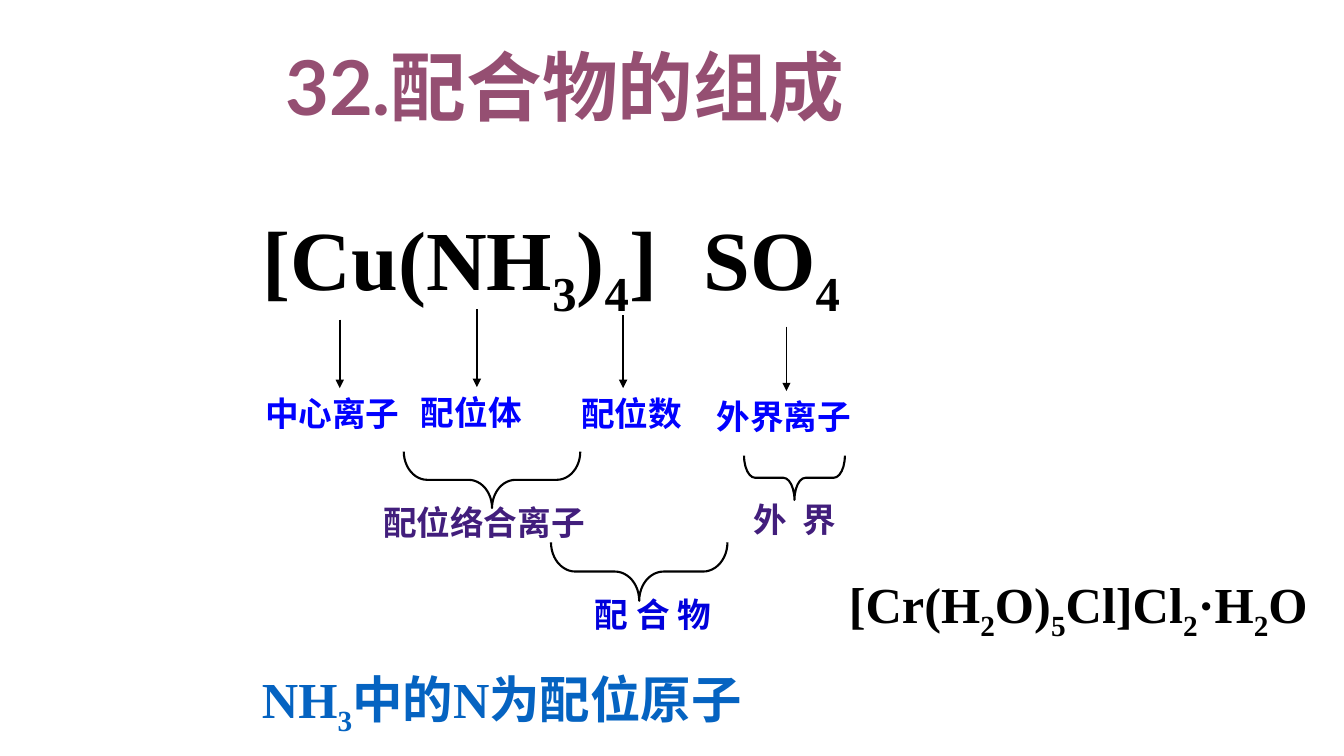
from pptx import Presentation
from pptx.dml.color import RGBColor
from pptx.enum.shapes import MSO_CONNECTOR, MSO_SHAPE
from pptx.enum.text import MSO_AUTO_SIZE, PP_ALIGN
from pptx.oxml.ns import qn
from pptx.util import Inches, Pt
from lxml.etree import SubElement

STRAIGHT = MSO_CONNECTOR.STRAIGHT
LEFT_BRACE = MSO_SHAPE.LEFT_BRACE
FIT_SHAPE = MSO_AUTO_SIZE.SHAPE_TO_FIT_TEXT
LEFT, CENTER = PP_ALIGN.LEFT, PP_ALIGN.CENTER

COLORS = {
    "title": "954F72",
    "ink": "000000",
    "part": "0101FF",
    "sphere": "421E7C",
    "compound": "0000DC",
    "note": "0563C1",
}
SERIF, TITLE_FONT, CJK = "Times New Roman", "Lato", "Noto Sans CJK SC"


def color(name):
    return RGBColor.from_string(COLORS[name])


class Diagram:
    def __init__(self, slide):
        self.slide = slide

    def text(self, box, parts, size, ink, font=SERIF, align=LEFT,
             wrap=True, tab=None, spacing=None):
        """Add one line of text; every second part is a subscript."""
        frame = self.slide.shapes.add_textbox(*map(Inches, box)).text_frame
        frame.word_wrap = wrap
        frame.auto_size = FIT_SHAPE
        line = frame.paragraphs[0]
        line.alignment = align
        if tab:
            stops = SubElement(line._p.get_or_add_pPr(), qn("a:tabLst"))
            SubElement(stops, qn("a:tab"), pos=str(Inches(tab)), algn="l")
        for index, part in enumerate(parts):
            run = line.add_run()
            run.text = part
            run.font.size = Pt(size)
            run.font.bold = True
            run.font.color.rgb = color(ink)
            run.font.name = font
            properties = run._r.get_or_add_rPr()
            SubElement(properties, qn("a:ea"), typeface=CJK)
            if index % 2:
                properties.set("baseline", "-25000")
            if spacing:
                properties.set("spc", str(spacing * 100))

    def label(self, left, top, width, words, ink, **style):
        self.text((left, top, width, 0.5), [words], 24, ink, align=CENTER, **style)

    def arrow(self, x, top, bottom):
        arrow = self.slide.shapes.add_connector(
            STRAIGHT, Inches(x), Inches(top), Inches(x), Inches(bottom))
        arrow.line.color.rgb = color("ink")
        arrow.line.width = Pt(1.25)
        SubElement(arrow.line._get_or_add_ln(), qn("a:tailEnd"), type="triangle")
        SubElement(arrow._element.spPr, qn("a:effectLst"))

    def brace(self, center_x, center_y, span, depth, curve):
        """Add a brace that opens upward, centred on the given point."""
        brace = self.slide.shapes.add_shape(
            LEFT_BRACE, Inches(center_x - depth / 2), Inches(center_y - span / 2),
            Inches(depth), Inches(span))
        brace.rotation = 270
        brace.adjustments[0] = curve
        brace.shadow.inherit = False
        brace.fill.background()
        brace.line.color.rgb = color("ink")
        brace.line.width = Pt(1.5)


def main():
    deck = Presentation()
    deck.slide_width, deck.slide_height = Inches(13.33), Inches(7.5)
    diagram = Diagram(deck.slides.add_slide(deck.slide_layouts[6]))

    diagram.text((2.73, 0.35, 7.58, 1.01), ["32.配合物的组成"], 54, "title",
                 font=TITLE_FONT)
    diagram.text((2.51, 2, 6.76, 1.11), ["[Cu(NH", "3", ")", "4", "]\tSO", "4"],
                 60, "ink", tab=4.37)

    # Arrow x, arrow top, label left, label top, label width, words
    formula_parts = [
        (3.37, 3.17, 2.34, 3.85, 1.91, "中心离子"),
        (4.73, 3.07, 3.97, 3.84, 1.41, "配位体"),
        (6.18, 3.13, 5.32, 3.85, 1.89, "配位数"),
        (7.8, 3.24, 6.84, 3.88, 1.87, "外界离子"),
    ]
    for x, start, left, top, width, words in formula_parts:
        diagram.arrow(x, start, top)
        diagram.label(left, top, width, words, "part")

    diagram.brace(4.88, 4.76, 1.75, 0.56, 0.416)
    diagram.label(3.51, 4.93, 2.58, "配位络合离子", "sphere")
    diagram.brace(7.88, 4.74, 1, 0.44, 0.25)
    diagram.label(7.23, 4.9, 1.31, "外 界", "sphere", spacing=3)
    diagram.brace(6.34, 5.67, 1.75, 0.58, 0.416)
    diagram.label(5.44, 5.84, 2.07, "配 合 物", "compound", font=CJK)

    diagram.text((2.5, 6.58, 5.5, 0.71), ["NH", "3", "中的N为配位原子"], 36, "note")
    diagram.text((8.32, 5.64, 4.82, 0.71),
                 ["[Cr(H", "2", "O)", "5", "Cl]Cl", "2", "·H", "2", "O"],
                 36, "ink", wrap=False)
    deck.save("out.pptx")


if __name__ == "__main__":
    main()
